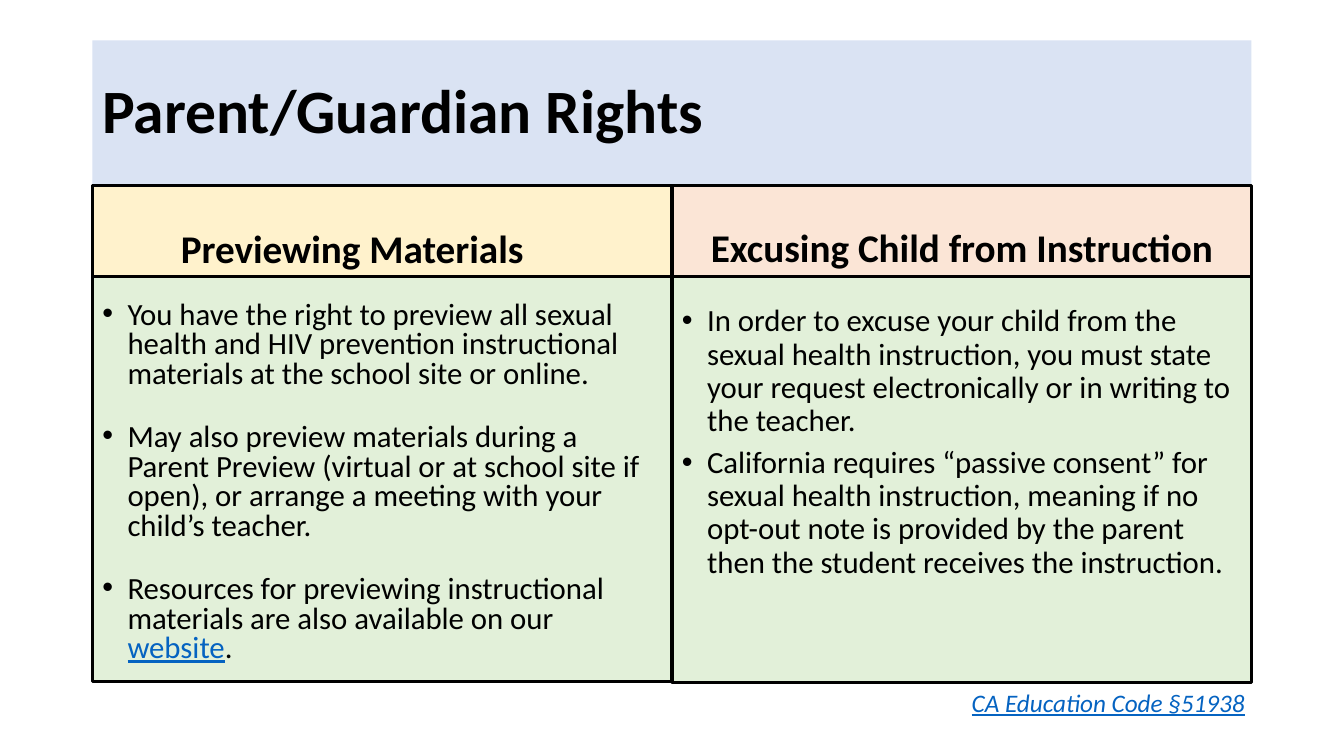
"""Build the Parent/Guardian Rights slide."""
from dataclasses import dataclass

from lxml.etree import SubElement
from pptx import Presentation
from pptx.dml.color import RGBColor
from pptx.enum.shapes import MSO_SHAPE
from pptx.enum.text import MSO_ANCHOR, PP_ALIGN
from pptx.oxml.ns import qn
from pptx.slide import Slide
from pptx.text.text import TextFrame, _Paragraph
from pptx.util import Pt

COLORS = {
    "text": "000000",
    "link": "0563C1",
    "title": "DAE3F3",
    "preview": "FFF2CC",
    "excuse": "FBE5D6",
    "body": "E2F0D9",
}
FONT = "Calibri"
LEFT, TITLE_TOP, HEADING_TOP, BODY_TOP = 66, 28.8, 132.5, 197.3
COLUMN_WIDTH, TITLE_HEIGHT, HEADING_HEIGHT = 414, 104.4, 64.8
SIDE_INSET, EDGE_INSET = 7.2, 3.6


@dataclass(frozen=True)
class Panel:
    left: float
    top: float
    width: float
    height: float
    color: str
    outlined: bool = True
    anchor: MSO_ANCHOR = MSO_ANCHOR.TOP
    top_inset: float = EDGE_INSET
    right_inset: float = SIDE_INSET


@dataclass(frozen=True)
class TextStyle:
    size: float
    bold: bool = False
    alignment: PP_ALIGN = PP_ALIGN.LEFT
    line_spacing: float = 1.0
    space_before: float = 0
    space_after: float = 0
    bulleted: bool = False


@dataclass(frozen=True)
class Column:
    heading: str
    heading_color: str
    heading_style: TextStyle
    heading_right_inset: float
    points: list[list[str]]
    body_style: TextStyle
    body_height: float
    body_top_inset: float


LINK_TEXTS = {"website"}

COLUMNS = [
    Column(
        "Previewing Materials", "preview",
        TextStyle(28, bold=True, alignment=PP_ALIGN.CENTER), 50,
        [
            ["You have the right to preview all sexual health and HIV prevention "
             "instructional materials at the school site or online."],
            ["May also preview materials during a Parent Preview (virtual or at school "
             "site if open), or arrange a meeting with your child’s teacher."],
            ["Resources for previewing instructional materials are also available on our ",
             "website", "."],
        ],
        TextStyle(22, line_spacing=0.8, space_before=24, bulleted=True), 289.4, 18.2,
    ),
    Column(
        "Excusing Child from Instruction", "excuse",
        TextStyle(28, bold=True, alignment=PP_ALIGN.CENTER, line_spacing=0.9), SIDE_INSET,
        [
            ["In order to excuse your child from the sexual health instruction, you must "
             "state your request electronically or in writing to the teacher."],
            ["California requires “passive consent” for sexual health instruction, meaning "
             "if no opt-out note is provided by the parent then the student receives the "
             "instruction."],
        ],
        TextStyle(22, line_spacing=0.9, space_after=6, bulleted=True), 290.2, 20.8,
    ),
]


def color(name: str) -> RGBColor:
    return RGBColor.from_string(COLORS[name])


def add_bullet(paragraph: _Paragraph) -> None:
    properties = paragraph._p.get_or_add_pPr()
    properties.set("marL", str(Pt(18)))
    properties.set("indent", str(-Pt(18)))
    SubElement(properties, qn("a:buFont"), typeface="Arial")
    SubElement(properties, qn("a:buChar"), char="•")


def write_paragraph(paragraph: _Paragraph, parts: list[str], style: TextStyle,
                    space_before: float) -> None:
    if style.bulleted:
        add_bullet(paragraph)
    paragraph.alignment = style.alignment
    paragraph.line_spacing = style.line_spacing
    paragraph.space_before = Pt(space_before)
    paragraph.space_after = Pt(style.space_after)
    for part in parts:
        run = paragraph.add_run()
        run.text = part
        is_link = part in LINK_TEXTS
        run.font.name = FONT
        run.font.size = Pt(style.size)
        run.font.bold = style.bold
        run.font.underline = is_link
        run.font.color.rgb = color("link" if is_link else "text")


def write_text(text_frame: TextFrame, paragraphs: list[list[str]], style: TextStyle) -> None:
    for index, parts in enumerate(paragraphs):
        paragraph = text_frame.add_paragraph() if index else text_frame.paragraphs[0]
        write_paragraph(paragraph, parts, style, style.space_before if index else 0)


def add_panel(slide: Slide, panel: Panel, paragraphs: list[list[str]],
              style: TextStyle) -> None:
    shape = slide.shapes.add_shape(
        MSO_SHAPE.RECTANGLE, Pt(panel.left), Pt(panel.top), Pt(panel.width), Pt(panel.height))
    shape.shadow.inherit = False
    shape.fill.solid()
    shape.fill.fore_color.rgb = color(panel.color)
    if panel.outlined:
        shape.line.color.rgb = color("text")
        shape.line.width = Pt(2.25)
    else:
        shape.line.fill.background()
    text_frame = shape.text_frame
    text_frame.word_wrap = True
    text_frame.vertical_anchor = panel.anchor
    text_frame.margin_left = Pt(SIDE_INSET)
    text_frame.margin_right = Pt(panel.right_inset)
    text_frame.margin_top = Pt(panel.top_inset)
    text_frame.margin_bottom = Pt(EDGE_INSET)
    write_text(text_frame, paragraphs, style)


def add_column(slide: Slide, column: Column, left: float) -> None:
    heading = Panel(left, HEADING_TOP, COLUMN_WIDTH, HEADING_HEIGHT, column.heading_color,
                    anchor=MSO_ANCHOR.BOTTOM, right_inset=column.heading_right_inset)
    body = Panel(left, BODY_TOP, COLUMN_WIDTH, column.body_height, "body",
                 top_inset=column.body_top_inset)
    add_panel(slide, heading, [[column.heading]], column.heading_style)
    add_panel(slide, body, column.points, column.body_style)


def add_citation(slide: Slide) -> None:
    text_box = slide.shapes.add_textbox(Pt(687), Pt(487.4), Pt(252), Pt(29))
    text_box.text_frame.word_wrap = True
    text_box.text_frame.text = "CA Education Code §51938"
    font = text_box.text_frame.paragraphs[0].runs[0].font
    font.name = FONT
    font.size = Pt(18)
    font.italic = True
    font.underline = True
    font.color.rgb = color("link")


def main() -> None:
    presentation = Presentation()
    presentation.slide_width, presentation.slide_height = Pt(960), Pt(540)
    slide = presentation.slides.add_slide(presentation.slide_layouts[6])
    title = Panel(LEFT, TITLE_TOP, 2 * COLUMN_WIDTH, TITLE_HEIGHT, "title",
                  outlined=False, anchor=MSO_ANCHOR.MIDDLE)
    add_panel(slide, title, [["Parent/Guardian Rights"]],
              TextStyle(44, bold=True, line_spacing=0.9))
    for index, column in enumerate(COLUMNS):
        add_column(slide, column, LEFT + index * COLUMN_WIDTH)
    add_citation(slide)
    presentation.save("out.pptx")


if __name__ == "__main__":
    main()
